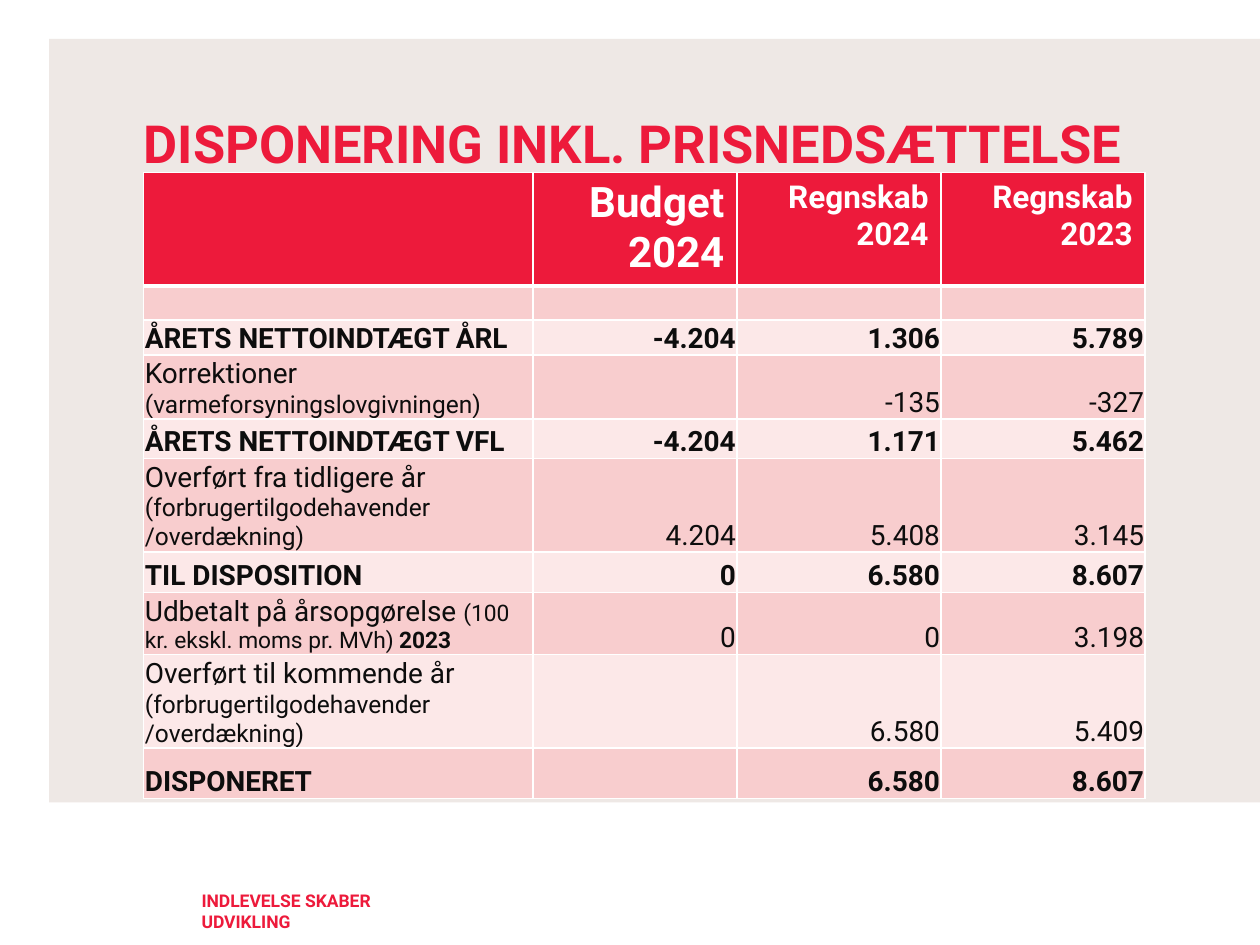
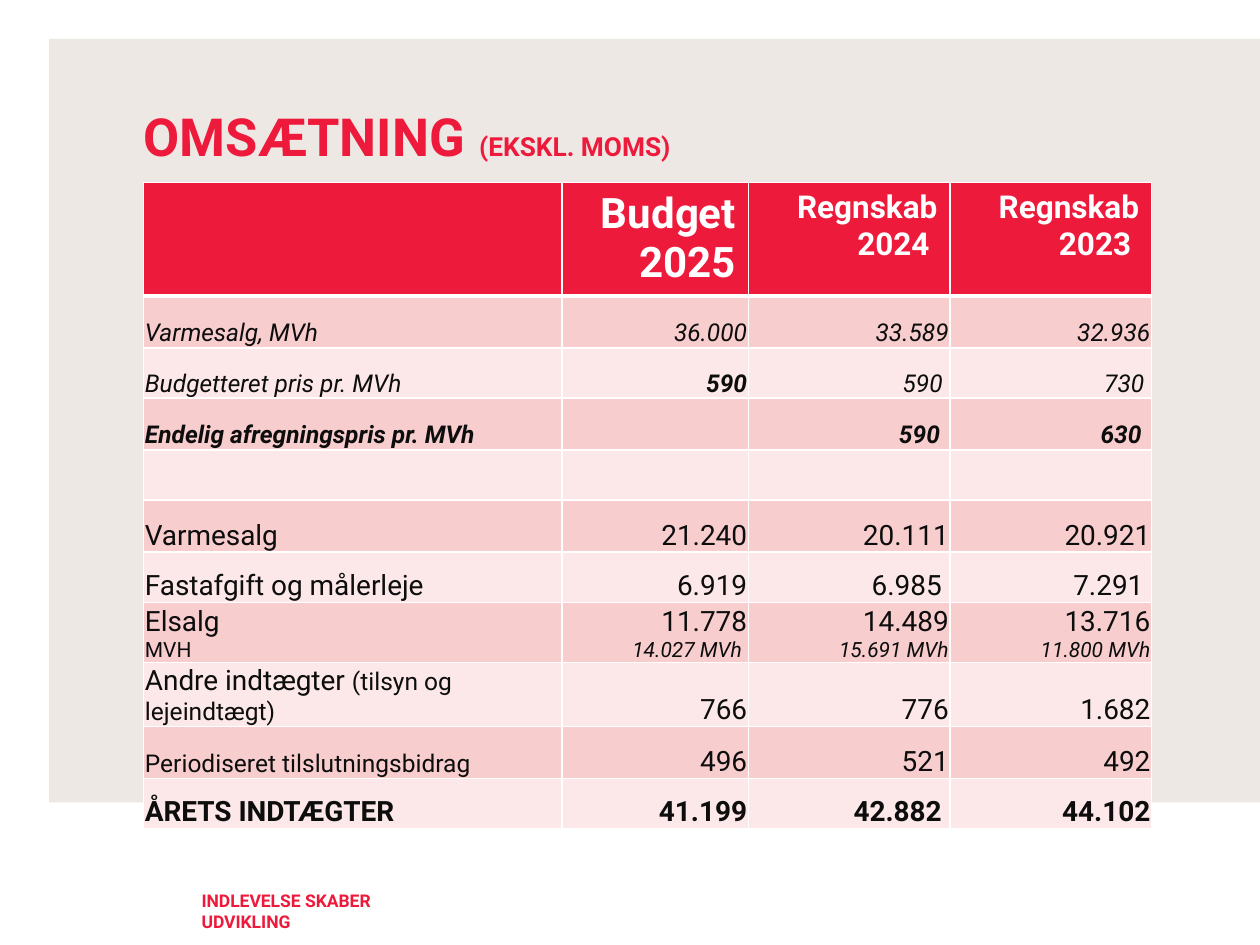
import pptx
import pptx.dml.color
import pptx.enum.shapes
import pptx.enum.text
import pptx.util
from lxml import etree

Inch, Pt = pptx.util.Inches, pptx.util.Pt
Align, Anchor = pptx.enum.text.PP_ALIGN, pptx.enum.text.MSO_ANCHOR

FONT = "Roboto"
RED, SAND, INK, WHITE = "ED1A3B", "EEE8E5", "0D0D0D", "FFFFFF"
STRIPES = ["F8CDCE", "FCE8E8"]
FOOTER = "INDLEVELSE SKABER UDVIKLING"
LEFT = 1.14
EDGE = (0.01, 0.01, 0.01, 0)
HEAD_EDGE = (0.1, 0.05, 0.1, 0.05)
PRICE_EDGE = (0.08, 0, 0.08, 0)

# A cell is a text or a list of lines, a line is a text or a list of runs,
# and a run is a text or (text, size, style) with style letters b and i.
CARRY = ("(forbrugertilgodehavender /overdækning)", 14, "")


def power(total, sold):
    return [total, [(sold, 12, "i")]]


# Rows: (height, size, style, cells)
SLIDES = [
    dict(
        title=[("DISPONERING INKL. PRISNEDSÆTTELSE", 30, "b")],
        title_top=0.88, top=1.37, cols=[3.09, 1.62, 1.62, 1.62],
        rows=[
            (0.88, 18, "b", ["", [[("Budget 2024", 24, "b")]],
                             "Regnskab 2024", "Regnskab 2023"]),
            (0.27, 8, "", [""] * 4),
            (0.27, 16, "b", ["ÅRETS NETTOINDTÆGT ÅRL", "-4.204", "1.306", "5.789"]),
            (0.49, 16, "", [[["Korrektioner ", ("(varmeforsyningslovgivningen)", 14, "")]],
                            "", "-135", "-327"]),
            (0.31, 16, "b", ["ÅRETS NETTOINDTÆGT VFL", "-4.204", "1.171", "5.462"]),
            (0.73, 16, "", [[["Overført fra tidligere år ", CARRY]],
                            "4.204", "5.408", "3.145"]),
            (0.32, 16, "b", ["TIL DISPOSITION", "0", "6.580", "8.607"]),
            (0.48, 16, "", [[["Udbetalt på årsopgørelse ",
                              ("(100 kr. ekskl. moms pr. MVh) ", 13, ""),
                              ("2023", 13, "b")]], "0", "0", "3.198"]),
            (0.73, 16, "", [[["Overført til kommende år ", CARRY]],
                            "", "6.580", "5.409"]),
            (0.4, 16, "b", ["DISPONERET", "", "6.580", "8.607"]),
        ]),
    dict(
        title=[("OMSÆTNING", 30, "b"), (" ", 32, "b"), ("(EKSKL. MOMS)", 15, "b")],
        title_top=0.8, top=1.45, cols=[3.32, 1.48, 1.6, 1.6],
        rows=[
            (0.89, 18, "b", ["", [[("Budget 2025", 24, "b")]],
                             "Regnskab 2024 ", "Regnskab 2023 "]),
            (0.41, 14, "i", ["Varmesalg, MVh", "36.000", "33.589", "32.936"]),
            (0.4, 14, "i", ["Budgetteret pris pr. MVh", [[("590", 14, "bi")]],
                            "590 ", "730 "]),
            (0.41, 14, "bi", ["Endelig afregningspris pr. MVh", "", "590", "630"]),
            (0.4, 14, "", [""] * 4),
            (0.41, 16, "", ["Varmesalg", "21.240", "20.111", "20.921"]),
            (0.4, 16, "", ["Fastafgift og målerleje", "6.919", "6.985 ", "7.291 "]),
            (0.46, 16, "", [["Elsalg", [("MVH", 12, "")]],
                            power("11.778", "14.027 MVh "),
                            power("14.489", "15.691 MVh"),
                            power("13.716", "11.800 MVh")]),
            (0.5, 16, "", [[["Andre indtægter ", ("(tilsyn og lejeindtægt)", 14, "")]],
                           "766", "776", "1.682"]),
            (0.41, 16, "", [[[("Periodiseret tilslutningsbidrag", 14, "")]],
                            "496", "521", "492"]),
            (0.4, 16, "b", ["ÅRETS INDTÆGTER", "41.199", "42.882 ", "44.102"]),
        ]),
]


def tint(code):
    return pptx.dml.color.RGBColor.from_string(code)


def paint(fill, code):
    fill.solid()
    fill.fore_color.rgb = tint(code)


def style_font(font, size, style):
    font.size = Pt(size)
    font.bold = "b" in style
    font.italic = "i" in style


def write(frame, lines, size, style, color, align=Align.LEFT):
    """Fill a text frame with lines of runs."""
    for n, line in enumerate(lines):
        para = frame.add_paragraph() if n else frame.paragraphs[0]
        para.alignment = align
        para.font.name = FONT
        para.font.color.rgb = tint(color)
        runs = [line] if isinstance(line, str) else line
        runs = [(r, size, style) if isinstance(r, str) else r for r in runs]
        if len({r[1:] for r in runs}) == 1:
            style_font(para.font, *runs[0][1:])
        for text, *look in runs:
            if text:
                run = para.add_run()
                run.text = text
                style_font(run.font, *look)
            else:
                para._p.get_or_add_endParaRPr().set("sz", str(size * 100))


def inset(box, edges):
    (box.margin_left, box.margin_top,
     box.margin_right, box.margin_bottom) = map(Inch, edges)


def border(cell, row):
    """White rules, with a thick one under the header row."""
    props = cell._tc.get_or_add_tcPr()
    widths = dict(L=1, R=1, T=3 if row == 1 else 1, B=1 if row else 3)
    for side, width in widths.items():
        line = etree.SubElement(props, pptx.oxml.ns.qn("a:ln" + side), w=str(Pt(width)))
        solid = etree.SubElement(line, pptx.oxml.ns.qn("a:solidFill"))
        etree.SubElement(solid, pptx.oxml.ns.qn("a:srgbClr"), val=WHITE)


def add_frame(slide):
    """Sand band behind everything, and the footer."""
    band = slide.shapes.add_shape(pptx.enum.shapes.MSO_SHAPE.RECTANGLE,
                                  Inch(0.39), Inch(0.31), Inch(9.61), Inch(6.06))
    band.shadow.inherit = False
    paint(band.fill, SAND)
    band.line.fill.background()
    slide.shapes._spTree.insert(2, band._element)

    foot = slide.shapes.add_textbox(Inch(1.6), Inch(7.06), Inch(1.7), Inch(0.33)).text_frame
    foot.word_wrap = True
    inset(foot, (0, 0, 0, 0))
    write(foot, [FOOTER], 10, "b", RED)


def add_title(slide, runs, top):
    title = slide.shapes.title
    title.left, title.top, title.width, title.height = map(Inch, (LEFT, top, 8.51, 0.55))
    frame = title.text_frame
    frame.vertical_anchor = Anchor.TOP
    frame.auto_size = pptx.enum.text.MSO_AUTO_SIZE.NONE
    inset(frame, (0, 0, 0, 0))
    write(frame, [runs], 30, "b", RED)


def add_grid(slide, top, cols, rows):
    high = sum(row[0] for row in rows)
    table = slide.shapes.add_table(len(rows), len(cols), Inch(LEFT), Inch(top),
                                   Inch(sum(cols)), Inch(high)).table
    for col, width in zip(table.columns, cols):
        col.width = Inch(width)
    for r, (height, size, style, cells) in enumerate(rows):
        table.rows[r].height = Inch(height)
        for c, lines in enumerate(cells):
            cell = table.cell(r, c)
            border(cell, r)
            paint(cell.fill, STRIPES[(r - 1) % 2] if r else RED)
            cell.vertical_anchor = Anchor.BOTTOM if r else Anchor.TOP
            price = style == "bi" and c
            inset(cell, HEAD_EDGE if not r else PRICE_EDGE if price else EDGE)
            write(cell.text_frame, [lines] if isinstance(lines, str) else lines,
                  size, style, INK if r else WHITE, Align.RIGHT if c else Align.LEFT)


def main():
    deck = pptx.Presentation()
    deck.slide_width, deck.slide_height = Inch(10), Inch(7.5)
    for page in SLIDES:
        slide = deck.slides.add_slide(deck.slide_layouts[5])
        add_frame(slide)
        add_title(slide, page["title"], page["title_top"])
        add_grid(slide, page["top"], page["cols"], page["rows"])
    deck.save("out.pptx")


if __name__ == "__main__":
    main()
